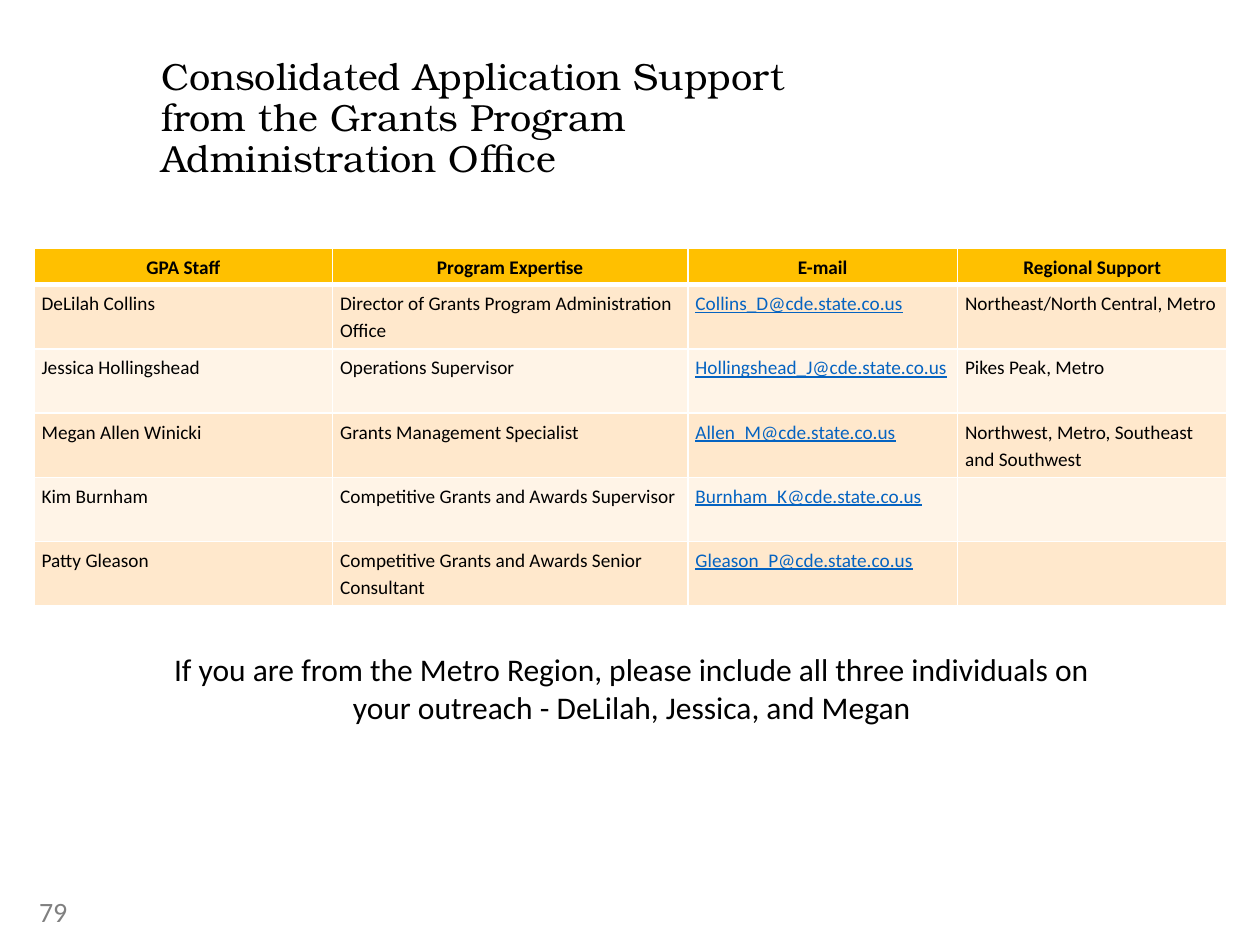
from pptx import Presentation
from pptx.util import Inches, Pt
from pptx.dml.color import RGBColor
from pptx.enum.text import MSO_ANCHOR, MSO_AUTO_SIZE, PP_ALIGN
from pptx.oxml import parse_xml
from pptx.oxml.ns import nsdecls

BLACK = RGBColor(0x00, 0x00, 0x00)
GRAY = RGBColor(0x80, 0x80, 0x80)
LINK = RGBColor(0x05, 0x63, 0xC1)
GOLD = RGBColor(0xFF, 0xC0, 0x00)
PEACH = RGBColor(0xFF, 0xE8, 0xCC)
CREAM = RGBColor(0xFF, 0xF4, 0xE7)
WHITE = RGBColor(0xFF, 0xFF, 0xFF)


def set_font(p, size, color=BLACK, name="Calibri"):
    p.font.name = name
    p.font.size = Pt(size)
    p.font.color.rgb = color


def set_borders(cell, bottom):
    tcPr = cell._tc.get_or_add_tcPr()
    for i, (side, width) in enumerate(zip("LRTB", (1, 1, 1, bottom))):
        tcPr.insert(i, parse_xml(
            f'<a:ln{side} {nsdecls("a")} w="{Pt(width)}"><a:solidFill>'
            f'<a:srgbClr val="{WHITE}"/></a:solidFill></a:ln{side}>'))


prs = Presentation()
prs.slide_width = Inches(10)
prs.slide_height = Inches(7.5)
s = prs.slides.add_slide(prs.slide_layouts[5])

title = s.shapes.title
title.left, title.top = Inches(1.28), Inches(0.46)
title.width, title.height = Inches(5.64), Inches(0.65)
tf = title.text_frame
tf.text = "Consolidated Application Support from the Grants Program Administration Office"
tf.word_wrap = True
tf.auto_size = MSO_AUTO_SIZE.NONE
tf.vertical_anchor = MSO_ANCHOR.TOP
tf.margin_left = tf.margin_right = tf.margin_top = tf.margin_bottom = 0
p = tf.paragraphs[0]
p.alignment = PP_ALIGN.LEFT
p.line_spacing = 0.9
set_font(p, 21.6, name="TeX Gyre Bonum")

sp = s.shapes.add_textbox(Inches(0.24), Inches(7.03), Inches(2.25), Inches(0.4))
tf = sp.text_frame
tf.text = "79"
tf.word_wrap = True
tf.vertical_anchor = MSO_ANCHOR.MIDDLE
tf.margin_left = tf.margin_right = Inches(0.07)
tf.margin_top = tf.margin_bottom = Inches(0.04)
set_font(tf.paragraphs[0], 16, GRAY)

EMAIL_COL = 2
rows = [
    ("GPA Staff", "Program Expertise", "E-mail", "Regional Support"),
    ("DeLilah Collins", "Director of Grants Program Administration Office",
     "Collins_D@cde.state.co.us", "Northeast/North Central, Metro"),
    ("Jessica Hollingshead", "Operations Supervisor",
     "Hollingshead_J@cde.state.co.us", "Pikes Peak, Metro"),
    ("Megan Allen Winicki", "Grants Management Specialist",
     "Allen_M@cde.state.co.us", "Northwest, Metro, Southeast and Southwest"),
    ("Kim Burnham", "Competitive Grants and Awards Supervisor",
     "Burnham_K@cde.state.co.us", ""),
    ("Patty Gleason", "Competitive Grants and Awards Senior Consultant",
     "Gleason_P@cde.state.co.us", ""),
]
table = s.shapes.add_table(len(rows), 4, Inches(0.27), Inches(1.97),
                           Inches(9.47), Inches(2.81)).table
for col, width in zip(table.columns, (2.37, 2.82, 2.14, 2.14)):
    col.width = Inches(width)
for i, row in enumerate(rows):
    header = i == 0
    table.rows[i].height = Inches(0.29 if header else 0.51)
    for j, value in enumerate(row):
        cell = table.cell(i, j)
        cell.text = value
        cell.margin_left = cell.margin_right = Inches(0.06)
        cell.margin_top = cell.margin_bottom = Inches(0.03)
        cell.fill.solid()
        cell.fill.fore_color.rgb = GOLD if header else PEACH if i % 2 else CREAM
        set_borders(cell, 3 if header else 1)
        p = cell.text_frame.paragraphs[0]
        p.line_spacing = 1.15
        p.alignment = PP_ALIGN.CENTER if header else PP_ALIGN.LEFT
        is_email = j == EMAIL_COL and not header
        set_font(p, 11, LINK if is_email else BLACK)
        p.font.bold = header
        p.font.underline = is_email

sp = s.shapes.add_textbox(Inches(1.08), Inches(5.11), Inches(7.87), Inches(0.71))
tf = sp.text_frame
tf.text = ("If you are from the Metro Region, please include all three individuals "
           "on your outreach - DeLilah, Jessica, and Megan")
tf.word_wrap = True
tf.auto_size = MSO_AUTO_SIZE.SHAPE_TO_FIT_TEXT
p = tf.paragraphs[0]
p.alignment = PP_ALIGN.CENTER
set_font(p, 18)

prs.save("out.pptx")
